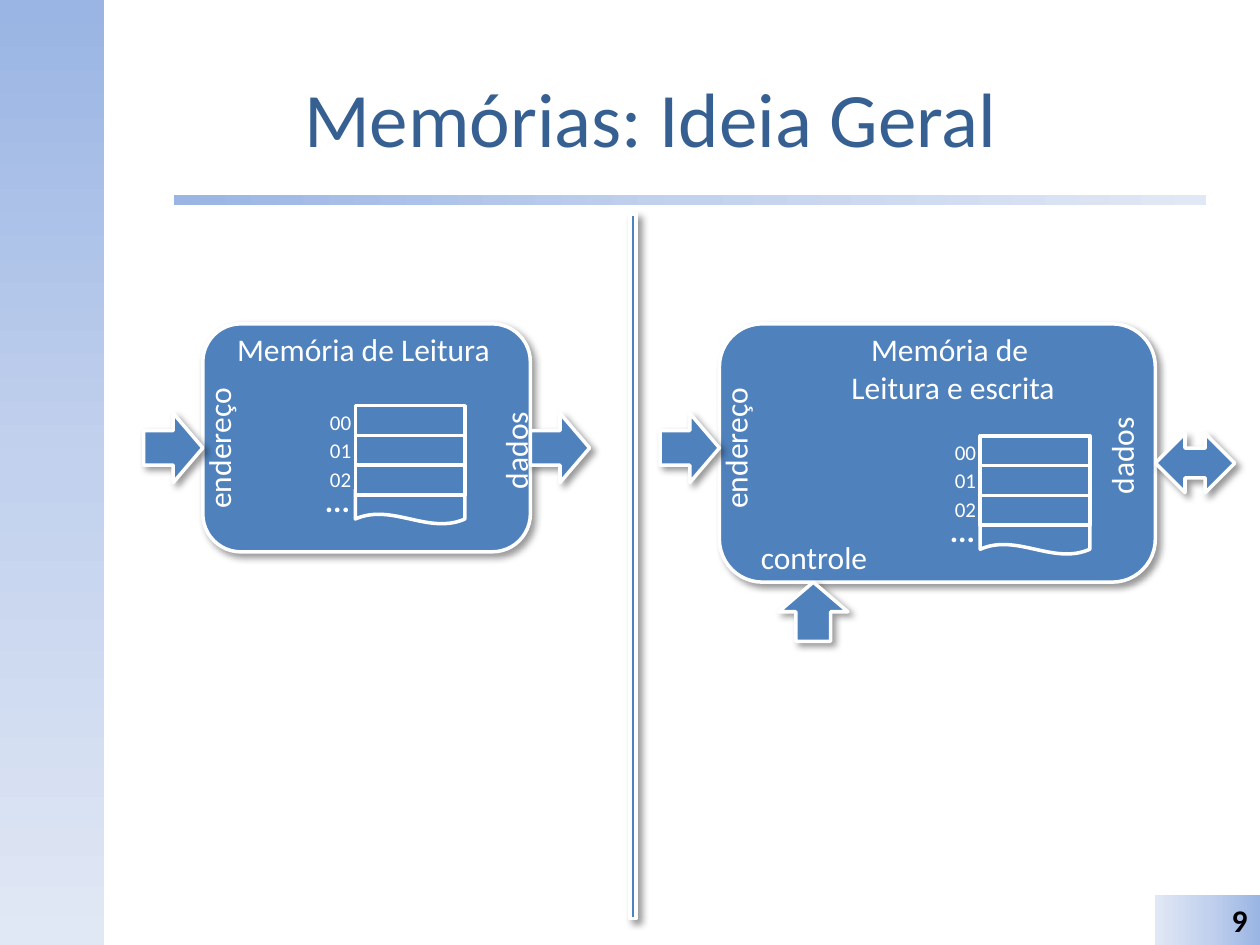
from copy import deepcopy

from lxml import etree
from pptx import Presentation
from pptx import util as u
from pptx.dml.color import RGBColor
from pptx.enum import shapes, text
from pptx.oxml.ns import qn

TITLE = "Memórias: Ideia Geral"
PAGE_NUMBER = "9"
FONT = "Calibri"
BLUE, WHITE, BLACK, TITLE_BLUE = "4F81BD", "FFFFFF", "000000", "376092"
GRADIENT = [(0, "9AB5E4"), (0.5, "C2D1ED"), (1, "E1E8F5")]
KIND = shapes.MSO_SHAPE

BANDS = [
    (KIND.RECTANGLE, (0, 0, 0.83, 7.5), 270),
    (KIND.RECTANGLE, (1.38, 1.55, 8.19, 0.08), 0),
    (KIND.RECTANGLE, (9.17, 7.1, 0.83, 0.4), 180),
]
ADDRESSES = ["00", "01", "02"]
CELL_WIDTH, CELL_HEIGHT = 0.87, 0.236
ADDRESS_STEP = 0.225
BODY_TOP = 2.57
ARROW = (0.47, 0.55)

MEMORIES = [
    {
        "body": (1.61, 2.6, 1.81),
        "title": (["Memória de Leitura"], (1.77, BODY_TOP, 2.23, 0.4)),
        "cells": (2.82, 3.22),
        "data": (3.68, 3.37),
        "arrows": [(KIND.RIGHT_ARROW, (4.21, 3.28, *ARROW), 0)],
        "labels": [],
    },
    {
        "body": (5.71, 3.46, 2.05),
        "title": (["Memória de ", "Leitura e escrita"], (6.65, BODY_TOP, 1.83, 0.71)),
        "cells": (7.78, 3.46),
        "data": (8.49, 3.41),
        "arrows": [
            (KIND.RIGHT_ARROW, (6.22, 4.58, *ARROW), 270),
            (KIND.LEFT_RIGHT_ARROW, (9.17, 3.44, 0.63, 0.47), 0),
        ],
        "labels": [("controle", (5.94, 4.22, 1.06, 0.4))],
    },
]


def color(value):
    return RGBColor.from_string(value)


def inches(box):
    return [u.Inches(value) for value in box]


def write(shape, lines, size=18, font_color=WHITE, bold=False, align="LEFT"):
    frame = shape.text_frame
    frame.text = "\n".join(lines)
    for paragraph in frame.paragraphs:
        paragraph.alignment = getattr(text.PP_ALIGN, align)
        font = paragraph.runs[0].font
        for name, value in {"name": FONT, "size": u.Pt(size), "bold": bold}.items():
            setattr(font, name, value)
        font.color.rgb = color(font_color)


def add_label(parent, lines, box, rotation=0, **style):
    label = parent.add_textbox(*inches(box))
    label.rotation = rotation
    label.text_frame.word_wrap = False
    write(label, lines, **style)


def add_shadow(shape):
    effects = shape._element.spPr.find(qn("a:effectLst"))
    shadow = etree.SubElement(
        effects, qn("a:outerShdw"), blurRad=str(u.Pt(4)), dist=str(u.Pt(3)),
        dir="2700000", algn="tl", rotWithShape="0",
    )
    tint = etree.SubElement(shadow, qn("a:srgbClr"), val=BLACK)
    etree.SubElement(tint, qn("a:alpha"), val="40000")


def add_block(parent, kind, box, rotation=0, shadow=True):
    block = parent.add_shape(kind, *inches(box))
    block.rotation = rotation
    block.shadow.inherit = False
    block.fill.solid()
    block.fill.fore_color.rgb = color(BLUE)
    block.line.color.rgb = color(WHITE)
    block.line.width = u.Pt(2)
    if shadow:
        add_shadow(block)
    return block


def add_band(parent, kind, box, angle):
    band = parent.add_shape(kind, *inches(box))
    band.shadow.inherit = False
    band.line.fill.background()
    band.fill.gradient()
    band.fill.gradient_angle = angle
    stop_list = band._element.spPr.find(qn("a:gradFill")).find(qn("a:gsLst"))
    stop_list.append(deepcopy(stop_list[0]))
    for stop, (position, value) in zip(band.fill.gradient_stops, GRADIENT):
        stop.position = position
        stop.color.rgb = color(value)
    return band


def add_cells(parent, left, top):
    bottom = top + len(ADDRESSES) * CELL_HEIGHT
    add_block(parent, KIND.WAVE, (left, bottom - 0.08, CELL_WIDTH, 0.31), shadow=False)
    for row, address in enumerate(ADDRESSES):
        cell_top = top + row * CELL_HEIGHT
        add_block(parent, KIND.RECTANGLE, (left, cell_top, CELL_WIDTH, CELL_HEIGHT), shadow=False)
        label_top = top - 0.02 + row * ADDRESS_STEP
        add_label(parent, [address], (left - 0.3, label_top, 0.37, 0.3), size=12)
    add_label(parent, ["..."], (left - 0.34, top + 0.55, 0.4, 0.4), bold=True)


def add_memory(slide, memory):
    parent = slide.shapes.add_group_shape().shapes
    left, width, height = memory["body"]
    add_block(parent, KIND.ROUNDED_RECTANGLE, (left, BODY_TOP, width, height))
    add_block(parent, KIND.RIGHT_ARROW, (left - ARROW[0], 3.28, *ARROW))
    for arrow in memory["arrows"]:
        add_block(parent, *arrow)
    add_label(parent, *memory["title"], align="CENTER")
    add_label(parent, ["endereço"], (left - 0.46, 3.35, 1.17, 0.4), rotation=270)
    add_label(parent, ["dados"], (*memory["data"], 0.82, 0.4), rotation=270)
    add_cells(parent, *memory["cells"])
    for label, box in memory["labels"]:
        add_label(parent, [label], box)


def main():
    presentation = Presentation()
    presentation.slide_width, presentation.slide_height = inches((10, 7.5))
    slide = presentation.slides.add_slide(presentation.slide_layouts[5])

    bands = [add_band(slide.shapes, *band) for band in BANDS]
    write(bands[-1], [PAGE_NUMBER], font_color=BLACK, bold=True, align="RIGHT")

    title = slide.shapes.title
    title.left, title.top, title.width, title.height = inches((0.83, 0.3, 8.67, 1.25))
    title.text_frame.vertical_anchor = text.MSO_ANCHOR.MIDDLE
    write(title, [TITLE], size=44, font_color=TITLE_BLUE, align="CENTER")

    for memory in MEMORIES:
        add_memory(slide, memory)
    add_block(slide.shapes, KIND.RECTANGLE, (5, 1.7, 0.05, 5.59))
    presentation.save("out.pptx")


if __name__ == "__main__":
    main()
